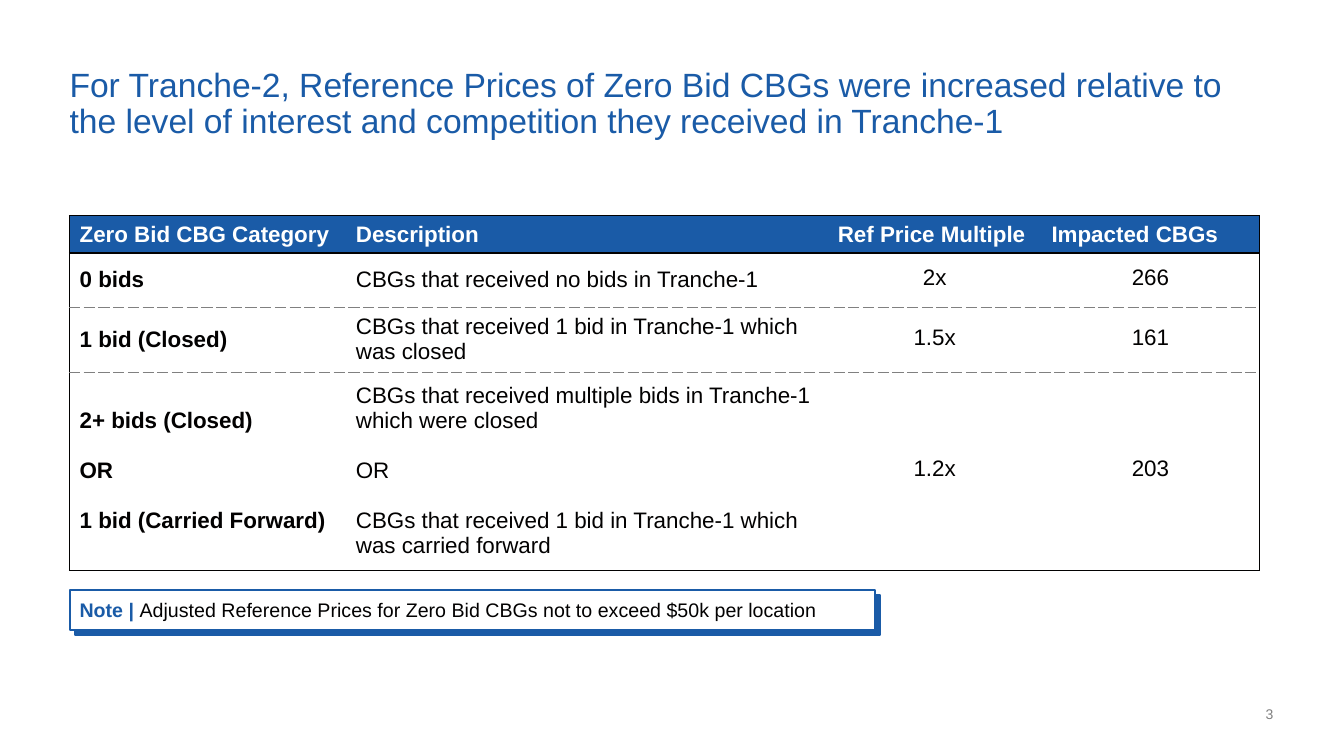
from pptx import Presentation
from pptx import util as u
from pptx.dml.color import RGBColor
from pptx.enum import shapes, text
from pptx.oxml import parse_xml
from pptx.oxml.ns import nsdecls

COLORS = {"blue": "1A5BA7", "ink": "020101", "gray": "808080", "white": "FFFFFF"}
SOLID = ("ink", 1, "solid")
DASHED = ("gray", 0.5, "dash")


class SlideBuilder:
    font_name = "Arial"

    def __init__(self, page):
        self.page = page

    def color(self, name):
        return RGBColor.from_string(COLORS[name])

    def style_font(self, font, size, color, bold=False):
        font.name = self.font_name
        font.size = u.Pt(size)
        font.bold = bold
        font.color.rgb = self.color(color)

    def text_box(self, bounds, words, size, color, align=text.PP_ALIGN.LEFT,
                 anchor=text.MSO_ANCHOR.TOP, line_spacing=None):
        frame = self.page.shapes.add_textbox(*map(u.Inches, bounds)).text_frame
        frame.word_wrap = True
        frame.vertical_anchor = anchor
        frame.margin_left = frame.margin_right = 0
        frame.margin_top = frame.margin_bottom = 0
        para = frame.paragraphs[0]
        para.text = words
        para.alignment = align
        para.line_spacing = line_spacing
        self.style_font(para.font, size, color)

    def rectangle(self, group, bounds, fill):
        box = group.shapes.add_shape(shapes.MSO_SHAPE.RECTANGLE, *map(u.Inches, bounds))
        box.shadow.inherit = False
        box.fill.solid()
        box.fill.fore_color.rgb = self.color(fill)
        box.line.color.rgb = self.color("blue")
        box.line.width = u.Pt(1.5)
        return box

    def note(self, bounds, label, words, offset):
        left, top, width, height = bounds
        group = self.page.shapes.add_group_shape()
        self.rectangle(group, (left + offset, top + offset, width, height), "blue")
        frame = self.rectangle(group, bounds, "white").text_frame
        frame.word_wrap = True
        frame.vertical_anchor = text.MSO_ANCHOR.MIDDLE
        para = frame.paragraphs[0]
        para.alignment = text.PP_ALIGN.LEFT
        for part, color, bold in ((label, "blue", True), (words, "ink", False)):
            span = para.add_run()
            span.text = part
            self.style_font(span.font, 14, color, bold)

    def borders(self, cell, left, right, top, bottom):
        properties = cell._tc.get_or_add_tcPr()
        for side, style in zip("LRTB", (left, right, top, bottom)):
            if style:
                color, width, dash = style
                line = (f'<a:ln{side} {nsdecls("a")} w="{u.Pt(width)}"><a:solidFill>'
                        f'<a:srgbClr val="{COLORS[color]}"/></a:solidFill>'
                        f'<a:prstDash val="{dash}"/></a:ln{side}>')
            else:
                line = f'<a:ln{side} {nsdecls("a")} w="0"><a:noFill/></a:ln{side}>'
            properties.append(parse_xml(line))

    def cell(self, cell, lines, color, bold, centered):
        cell.vertical_anchor = text.MSO_ANCHOR.MIDDLE
        if centered:
            cell.margin_left = cell.margin_right = cell.margin_top = u.Inches(0.01)
            cell.margin_bottom = u.Inches(0.05)
        frame = cell.text_frame
        frame.text = "\n".join(lines)
        for index, para in enumerate(frame.paragraphs):
            para.alignment = text.PP_ALIGN.CENTER if centered else text.PP_ALIGN.LEFT
            if index:
                para.space_before = u.Pt(18)
            self.style_font(para.font, 16, color, bold)

    def table(self, left, top, widths, heights, rows):
        bounds = map(u.Inches, (left, top, sum(widths), sum(heights)))
        table = self.page.shapes.add_table(len(rows), len(widths), *bounds).table
        table.horz_banding = False
        for column, width in zip(table.columns, widths):
            column.width = u.Inches(width)
        for row, height in zip(table.rows, heights):
            row.height = u.Inches(height)
        last_row, last_column = len(rows) - 1, len(widths) - 1
        for r, row in enumerate(rows):
            for c, lines in enumerate(row):
                cell = table.cell(r, c)
                header = r == 0
                self.borders(cell,
                             SOLID if c == 0 else None,
                             SOLID if c == last_column else None,
                             SOLID if r <= 1 else DASHED,
                             SOLID if r in (0, last_row) else DASHED)
                if header:
                    cell.fill.solid()
                    cell.fill.fore_color.rgb = self.color("blue")
                else:
                    cell.fill.background()
                self.cell(cell, lines, "white" if header else "ink",
                          bold=header or c == 0, centered=not header and c >= 2)


def main():
    deck = Presentation()
    deck.slide_width, deck.slide_height = u.Inches(13.33), u.Inches(7.5)
    builder = SlideBuilder(deck.slides.add_slide(deck.slide_layouts[6]))

    # Title
    builder.text_box((0.69, 0.68, 11.96, 0.69),
                     "For Tranche-2, Reference Prices of Zero Bid CBGs were increased relative to "
                     "the level of interest and competition they received in Tranche-1",
                     24, "blue", line_spacing=0.9)

    # Price table: each cell is a list of paragraphs
    builder.table(0.69, 2.14, (2.74, 4.78, 2.12, 2.16), (0.37, 0.54, 0.64, 1.97), [
        (["Zero Bid CBG Category"], ["Description"], ["Ref Price Multiple"], ["Impacted CBGs"]),
        (["0 bids"], ["CBGs that received no bids in Tranche-1"], ["2x"], ["266"]),
        (["1 bid (Closed)"], ["CBGs that received 1 bid in Tranche-1 which was closed"],
         ["1.5x"], ["161"]),
        (["2+ bids (Closed)", "OR", "1 bid (Carried Forward)"],
         ["CBGs that received multiple bids in Tranche-1 which were closed", "OR",
          "CBGs that received 1 bid in Tranche-1 which was carried forward"],
         ["1.2x"], ["203"]),
    ])

    # Note with offset backing
    builder.note((0.69, 5.85, 7.99, 0.4), "Note | ",
                 "Adjusted Reference Prices for Zero Bid CBGs not to exceed $50k per location",
                 offset=0.05)

    # Slide number
    builder.text_box((12.21, 7, 0.42, 0.17), "3", 10, "gray",
                     text.PP_ALIGN.RIGHT, text.MSO_ANCHOR.BOTTOM)

    deck.save("out.pptx")


if __name__ == "__main__":
    main()
